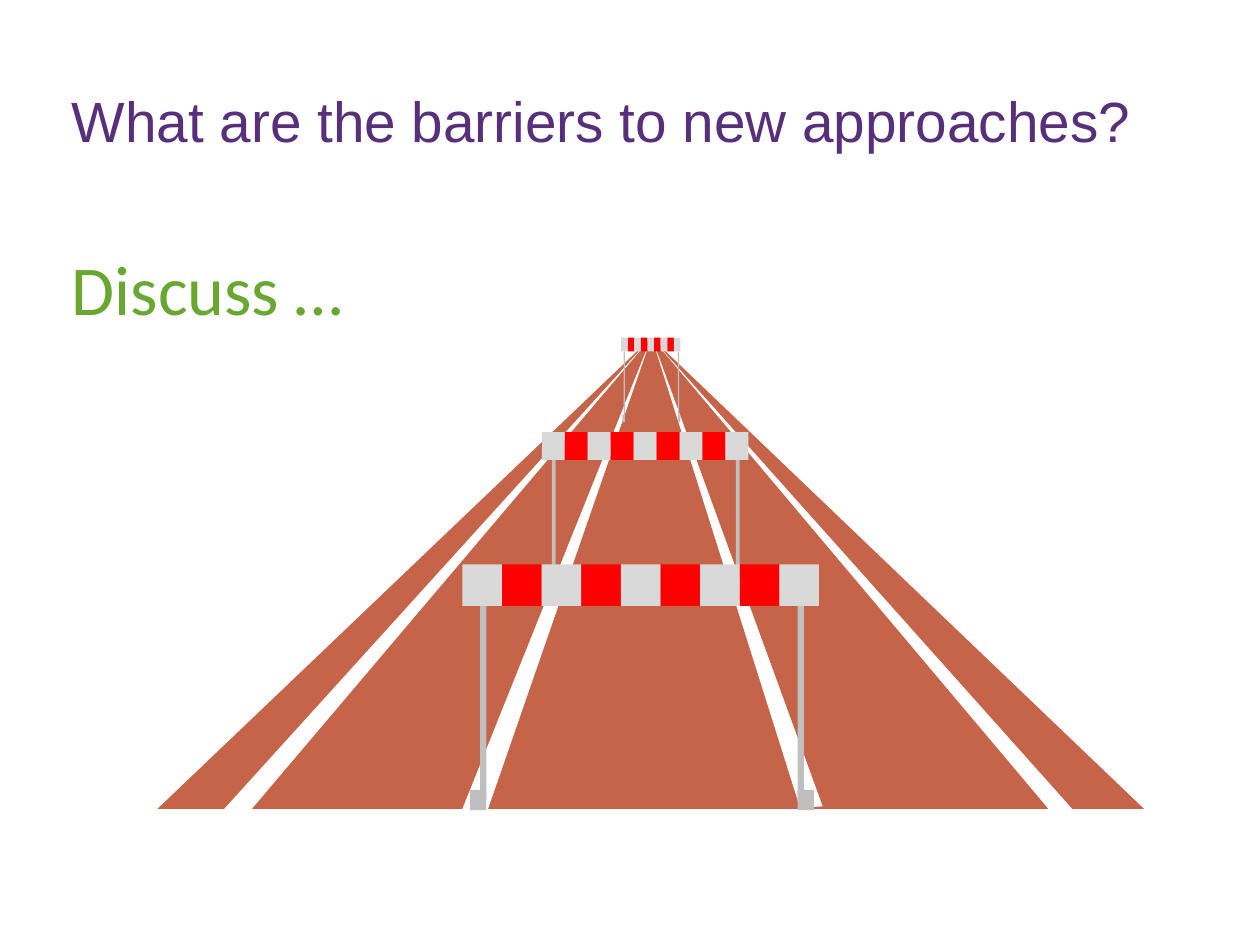
from pptx import Presentation
from pptx.dml.color import RGBColor
from pptx.enum.shapes import MSO_SHAPE
from pptx.enum.text import MSO_ANCHOR, MSO_AUTO_SIZE, PP_ALIGN
from pptx.util import Inches, Pt

PURPLE = RGBColor(0x58, 0x2F, 0x7A)
GREEN = RGBColor(0x69, 0xA8, 0x30)
CLAY = RGBColor(0xC6, 0x64, 0x49)
WHITE = RGBColor(0xFF, 0xFF, 0xFF)
RED = RGBColor(0xFF, 0x00, 0x00)
PALE_GREY = RGBColor(0xD9, 0xD9, 0xD9)
POST_GREY = RGBColor(0xBF, 0xBF, 0xBF)

TITLE = "What are the barriers to new approaches?"
PROMPT = "Discuss …"

MARGIN = 0.47
SLATS = 9

# Each wedge of the track: colour, then its corners from the vanishing point
TRACK = [
    (CLAY, [(5.17, 2.68), (9.08, 6.42), (1.25, 6.42)]),
    (WHITE, [(5.17, 2.68), (8.51, 6.42), (1.78, 6.42)]),
    (CLAY, [(5.17, 2.68), (8.32, 6.42), (2.0, 6.42)]),
    (WHITE, [(5.17, 2.68), (3.87, 6.43), (3.67, 6.42)]),
    (WHITE, [(5.17, 2.67), (6.35, 6.41), (6.53, 6.4)]),
]

# bar: left, top, width, height; posts: left edges; post and foot: width, height
HURDLES = [
    dict(bar=(4.3, 3.43, 1.64, 0.22), posts=(4.38, 5.84), post=(0.03, 1.06),
         foot=(0.08, 0.11), foot_top=4.65, feet=("right",)),
    dict(bar=(4.93, 2.68, 0.47, 0.11), posts=(4.95, 5.38), post=(0.01, 0.52),
         foot=(0.02, 0.06), foot_top=3.29, feet=("left", "right")),
    dict(bar=(3.67, 4.48, 2.83, 0.33), posts=(3.81, 6.33), post=(0.05, 1.55),
         foot=(0.13, 0.16), foot_top=6.27, feet=("left", "right")),
]


def paint(shape, color):
    shape.shadow.inherit = False
    shape.fill.solid()
    shape.fill.fore_color.rgb = color
    shape.line.fill.background()


def add_block(group, left, top, width, height, color):
    block = group.shapes.add_shape(
        MSO_SHAPE.RECTANGLE, *map(Inches, (left, top, width, height)))
    paint(block, color)


def add_track(slide):
    track = slide.shapes.add_group_shape()
    for color, corners in TRACK:
        start, *others = [(Inches(x), Inches(y)) for x, y in corners]
        builder = track.shapes.build_freeform(*start)
        builder.add_line_segments(others, close=True)
        paint(builder.convert_to_shape(), color)


def add_hurdle(slide, bar, posts, post, foot, foot_top, feet):
    """Draw a striped bar on two posts whose feet point outwards."""
    hurdle = slide.shapes.add_group_shape()
    left, top, width, height = bar
    slat = width / SLATS
    for i in range(SLATS):
        add_block(hurdle, left + i * slat, top, slat, height,
                  RED if i % 2 else PALE_GREY)
    for post_left in posts:
        add_block(hurdle, post_left, top + height, *post, POST_GREY)
    foot_lefts = {"left": posts[0] + post[0] - foot[0], "right": posts[1]}
    for side in feet:
        add_block(hurdle, foot_lefts[side], foot_top, *foot, POST_GREY)


def write(shape, text, *, font, size, color, anchor, wrap, auto_size):
    frame = shape.text_frame
    frame.text = text
    frame.word_wrap = wrap
    frame.auto_size = auto_size
    frame.vertical_anchor = anchor
    paragraph = frame.paragraphs[0]
    paragraph.alignment = PP_ALIGN.LEFT
    run_font = paragraph.runs[0].font
    run_font.name = font
    run_font.size = Pt(size)
    run_font.color.rgb = color


def main():
    deck = Presentation()
    deck.slide_width, deck.slide_height = Inches(10), Inches(7.5)
    slide = deck.slides.add_slide(deck.slide_layouts[5])

    title = slide.shapes.title
    title.left, title.top = Inches(MARGIN), Inches(0.4)
    title.width, title.height = Inches(10 - 2 * MARGIN), Inches(1.1)
    write(title, TITLE, font="Arial", size=32.4, color=PURPLE,
          anchor=MSO_ANCHOR.MIDDLE, wrap=True, auto_size=MSO_AUTO_SIZE.NONE)

    add_track(slide)
    for hurdle in HURDLES:
        add_hurdle(slide, **hurdle)

    prompt = slide.shapes.add_textbox(
        Inches(MARGIN), Inches(1.9), Inches(2.38), Inches(0.77))
    write(prompt, PROMPT, font="Calibri", size=40, color=GREEN,
          anchor=MSO_ANCHOR.TOP, wrap=False,
          auto_size=MSO_AUTO_SIZE.SHAPE_TO_FIT_TEXT)

    deck.save("out.pptx")


if __name__ == "__main__":
    main()
